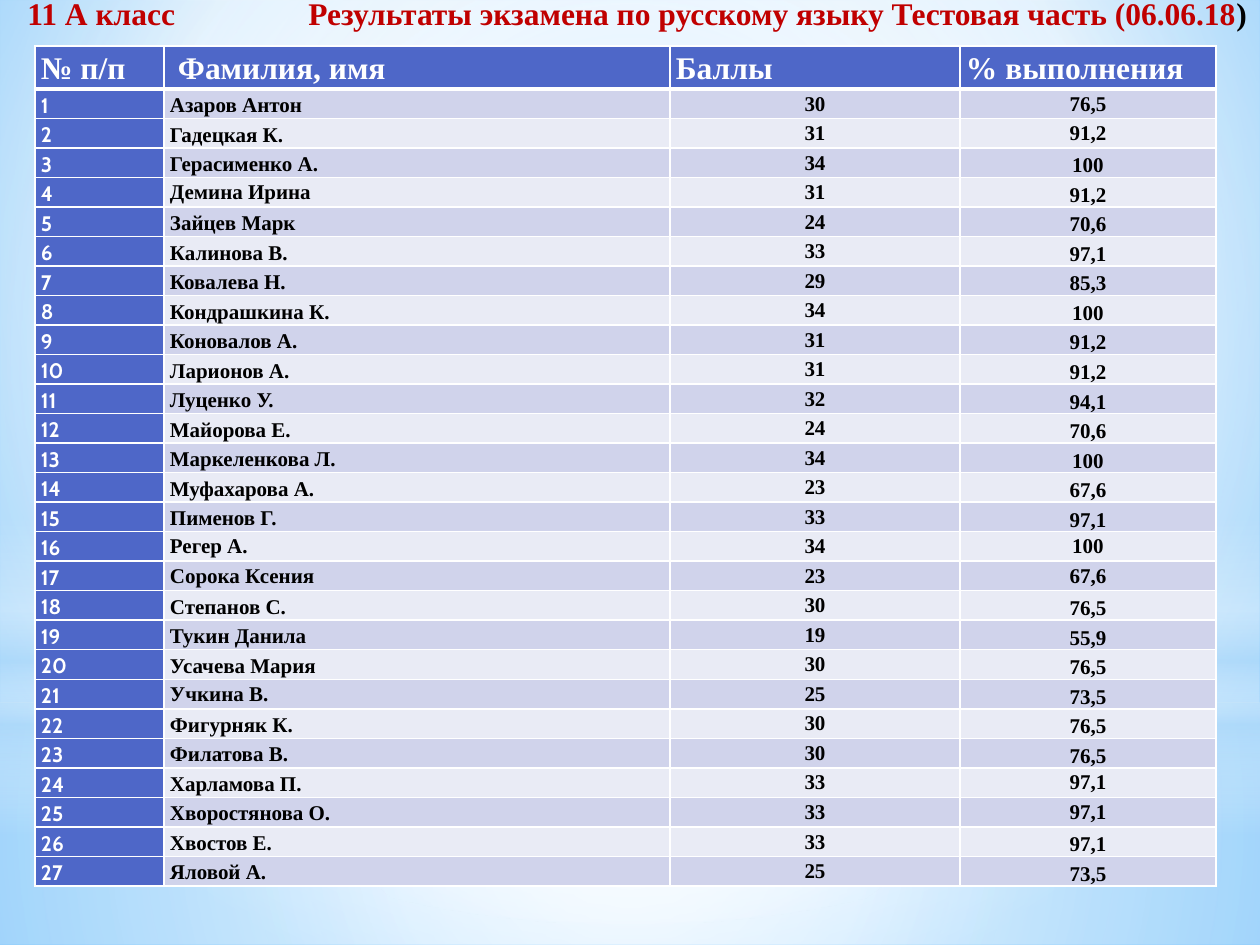
from dataclasses import dataclass
from typing import Optional

import pptx
import pptx.dml.color
import pptx.enum.shapes
import pptx.enum.text
import pptx.oxml
import pptx.oxml.ns
import pptx.util

EMU_PER_PX = 914400 / 126
SHAPES = pptx.enum.shapes.MSO_SHAPE
ANCHOR = pptx.enum.text.MSO_ANCHOR
ALIGN = pptx.enum.text.PP_ALIGN


@dataclass(frozen=True)
class Theme:
    serif: str = "Times New Roman"
    sans: str = "Cabin"
    heading_size: int = 18
    body_size: int = 12
    white: str = "FFFFFF"
    black: str = "000000"
    title: str = "C00000"
    accent: str = "4E67C8"
    bands: tuple = ("D0D3EB", "E9EBF5")
    haze: str = "B4DCFA"
    sky: str = "9ED5FF"
    deep_sky: str = "5BB9FF"


THEME = Theme()


@dataclass(frozen=True)
class Stop:
    position: int
    color: str
    opacity: int = 100


@dataclass(frozen=True)
class Gradient:
    """A circular gradient around focus (l, t, r, b), or a linear one at angle."""
    stops: tuple
    focus: tuple = (50, 50, 50, 50)
    angle: Optional[int] = None


@dataclass(frozen=True)
class Glow:
    preset: SHAPES
    top: int
    height: int
    gradient: Gradient


@dataclass(frozen=True)
class Student:
    name: str
    score: str
    percent: str


SLIDE_W, SLIDE_H = 1260, 945
TABLE_LEFT, TABLE_TOP = 35, 46
COLUMNS = (129, 506, 290, 256)
HEADER_H, ROW_H = 43, 29
CELL_INSET, NAME_HEADER_INSET = 6, 14

BACKDROP = Gradient((Stop(0, THEME.sky), Stop(60, THEME.white), Stop(100, THEME.deep_sky)),
                    focus=(20, 10, 20, 60))
GLOWS = (
    Glow(SHAPES.RECTANGLE, 703, 242, Gradient((
        Stop(0, THEME.white, 91), Stop(37, THEME.white, 76), Stop(100, THEME.haze, 79)))),
    Glow(SHAPES.RECTANGLE, 0, 703, Gradient((
        Stop(0, THEME.white, 89), Stop(48, THEME.white, 62), Stop(100, THEME.haze, 79)))),
    Glow(SHAPES.RECTANGLE, 519, 315, Gradient((
        Stop(0, THEME.white, 0), Stop(29, THEME.white, 30), Stop(45, THEME.haze, 40),
        Stop(55, THEME.white, 26), Stop(65, THEME.haze, 60), Stop(100, THEME.white, 0)), angle=90)),
    Glow(SHAPES.OVAL, 221, 703, Gradient((Stop(0, THEME.white), Stop(56, THEME.white, 0)))),
)

HEADERS = ("№ п/п", "Фамилия, имя", "Баллы", "% выполнения")
STUDENTS = (
    Student("Азаров Антон", "30", "76,5"),
    Student("Гадецкая К.", "31", "91,2"),
    Student("Герасименко А.", "34", "100"),
    Student("Демина Ирина", "31", "91,2"),
    Student("Зайцев Марк", "24", "70,6"),
    Student("Калинова В.", "33", "97,1"),
    Student("Ковалева Н.", "29", "85,3"),
    Student("Кондрашкина К.", "34", "100"),
    Student("Коновалов А.", "31", "91,2"),
    Student("Ларионов А.", "31", "91,2"),
    Student("Луценко У.", "32", "94,1"),
    Student("Майорова Е.", "24", "70,6"),
    Student("Маркеленкова Л.", "34", "100"),
    Student("Муфахарова А.", "23", "67,6"),
    Student("Пименов Г.", "33", "97,1"),
    Student("Регер А.", "34", "100"),
    Student("Сорока Ксения", "23", "67,6"),
    Student("Степанов С.", "30", "76,5"),
    Student("Тукин Данила", "19", "55,9"),
    Student("Усачева Мария", "30", "76,5"),
    Student("Учкина В.", "25", "73,5"),
    Student("Фигурняк К.", "30", "76,5"),
    Student("Филатова В.", "30", "76,5"),
    Student("Харламова П.", "33", "97,1"),
    Student("Хворостянова О.", "33", "97,1"),
    Student("Хвостов Е.", "33", "97,1"),
    Student("Яловой А.", "25", "73,5"),
)
TOP_NUMBERS = {18, 19, 20, 23, 24, 25, 26, 27}
TOP_NAMES = {4, 16, 17, 21}
TOP_PERCENTS = {1, 2, 16, 17, 24, 25}


def px(length: int) -> int:
    return round(length * EMU_PER_PX)


def rgb(color: str) -> pptx.dml.color.RGBColor:
    return pptx.dml.color.RGBColor.from_string(color)


def add_xml(parent, markup: str) -> None:
    """Append markup whose root tag ends with the {ns} slot."""
    parent.append(pptx.oxml.parse_xml(markup.format(ns=pptx.oxml.ns.nsdecls("a"))))


def paint_gradient(fill, holder, gradient: Gradient) -> None:
    fill.gradient()
    element = holder.xpath(".//a:gradFill")[0]
    for child in list(element):
        element.remove(child)
    stops = "".join(
        f'<a:gs pos="{s.position * 1000}"><a:srgbClr val="{s.color}">'
        f'<a:alpha val="{s.opacity * 1000}"/></a:srgbClr></a:gs>' for s in gradient.stops)
    add_xml(element, "<a:gsLst {ns}>" + stops + "</a:gsLst>")
    if gradient.angle is not None:
        add_xml(element, f'<a:lin ang="{gradient.angle * 60000}" scaled="0" {{ns}}/>')
        return
    edges = " ".join(f'{side}="{value * 1000}"' for side, value in zip("ltrb", gradient.focus))
    add_xml(element, f'<a:path path="circle" {{ns}}><a:fillToRect {edges}/></a:path>')


def draw_glow(slide, glow: Glow) -> None:
    shape = slide.shapes.add_shape(glow.preset, 0, px(glow.top), px(SLIDE_W), px(glow.height))
    shape.shadow.inherit = False
    shape.line.fill.background()
    paint_gradient(shape.fill, shape._element.spPr, glow.gradient)


def write(paragraph, text: str, *, size: int = THEME.body_size, font: str = THEME.serif,
          color: str = THEME.black, align=ALIGN.LEFT, spacing: float = 1.15, after: int = 0) -> None:
    paragraph.alignment = align
    paragraph.line_spacing = spacing
    paragraph.space_after = pptx.util.Pt(after)
    run = paragraph.add_run()
    run.text = text
    run.font.size = pptx.util.Pt(size)
    run.font.name = font
    run.font.bold = True
    run.font.color.rgb = rgb(color)


def fill_cell(cell, text: str, fill: str, *, anchor=ANCHOR.TOP, left: int = CELL_INSET,
              bottom_line: int = 1, **text_format) -> None:
    cell.margin_left, cell.margin_right = px(left), px(CELL_INSET)
    cell.margin_top = cell.margin_bottom = 0
    cell.vertical_anchor = anchor
    for side, width in (("L", 1), ("R", 1), ("T", 1), ("B", bottom_line)):
        add_xml(cell._tc.get_or_add_tcPr(),
                f'<a:ln{side} w="{width * 12700}" {{ns}}><a:solidFill>'
                f'<a:srgbClr val="{THEME.white}"/></a:solidFill></a:ln{side}>')
    cell.fill.solid()
    cell.fill.fore_color.rgb = rgb(fill)
    write(cell.text_frame.paragraphs[0], text, **text_format)


def draw_results(slide) -> None:
    heights = [HEADER_H] + [ROW_H] * len(STUDENTS)
    table = slide.shapes.add_table(len(heights), len(COLUMNS), px(TABLE_LEFT), px(TABLE_TOP),
                                   px(sum(COLUMNS)), px(sum(heights))).table
    table.first_row = table.horz_banding = False
    for column, width in zip(table.columns, COLUMNS):
        column.width = px(width)
    for row, height in zip(table.rows, heights):
        row.height = px(height)

    for col, header in enumerate(HEADERS):
        fill_cell(table.cell(0, col), header, THEME.accent, bottom_line=3,
                  left=NAME_HEADER_INSET if col == 1 else CELL_INSET,
                  size=THEME.heading_size, color=THEME.white, after=10)
    for number, student in enumerate(STUDENTS, 1):
        band = THEME.bands[(number - 1) % 2]
        fill_cell(table.cell(number, 0), str(number), THEME.accent, font=THEME.sans,
                  color=THEME.white, anchor=ANCHOR.TOP if number in TOP_NUMBERS else ANCHOR.MIDDLE)
        fill_cell(table.cell(number, 1), student.name, band,
                  anchor=ANCHOR.TOP if number in TOP_NAMES else ANCHOR.MIDDLE)
        fill_cell(table.cell(number, 2), student.score, band, align=ALIGN.CENTER)
        fill_cell(table.cell(number, 3), student.percent, band, align=ALIGN.CENTER,
                  anchor=ANCHOR.TOP if number in TOP_PERCENTS else ANCHOR.BOTTOM)


def draw_title(slide) -> None:
    frame = slide.shapes.add_textbox(px(15), px(-13), px(1807), px(51)).text_frame
    frame.word_wrap = True
    frame.auto_size = pptx.enum.text.MSO_AUTO_SIZE.SHAPE_TO_FIT_TEXT
    frame.vertical_anchor = ANCHOR.MIDDLE
    heading = frame.paragraphs[0]
    for text, color in (
            ("11 А класс\tРезультаты экзамена по русскому языку Тестовая часть (06.06.18", THEME.title),
            (")", THEME.black)):
        write(heading, text, size=THEME.heading_size, color=color, spacing=1.0)
    add_xml(heading._p.get_or_add_pPr(),
            f'<a:tabLst {{ns}}><a:tab pos="{px(281)}" algn="l"/></a:tabLst>')


def main() -> None:
    deck = pptx.Presentation()
    deck.slide_width, deck.slide_height = px(SLIDE_W), px(SLIDE_H)
    slide = deck.slides.add_slide(deck.slide_layouts[6])
    paint_gradient(slide.background.fill, slide._element.cSld.bg, BACKDROP)
    for glow in GLOWS:
        draw_glow(slide, glow)
    draw_results(slide)
    draw_title(slide)
    deck.save("out.pptx")


if __name__ == "__main__":
    main()
